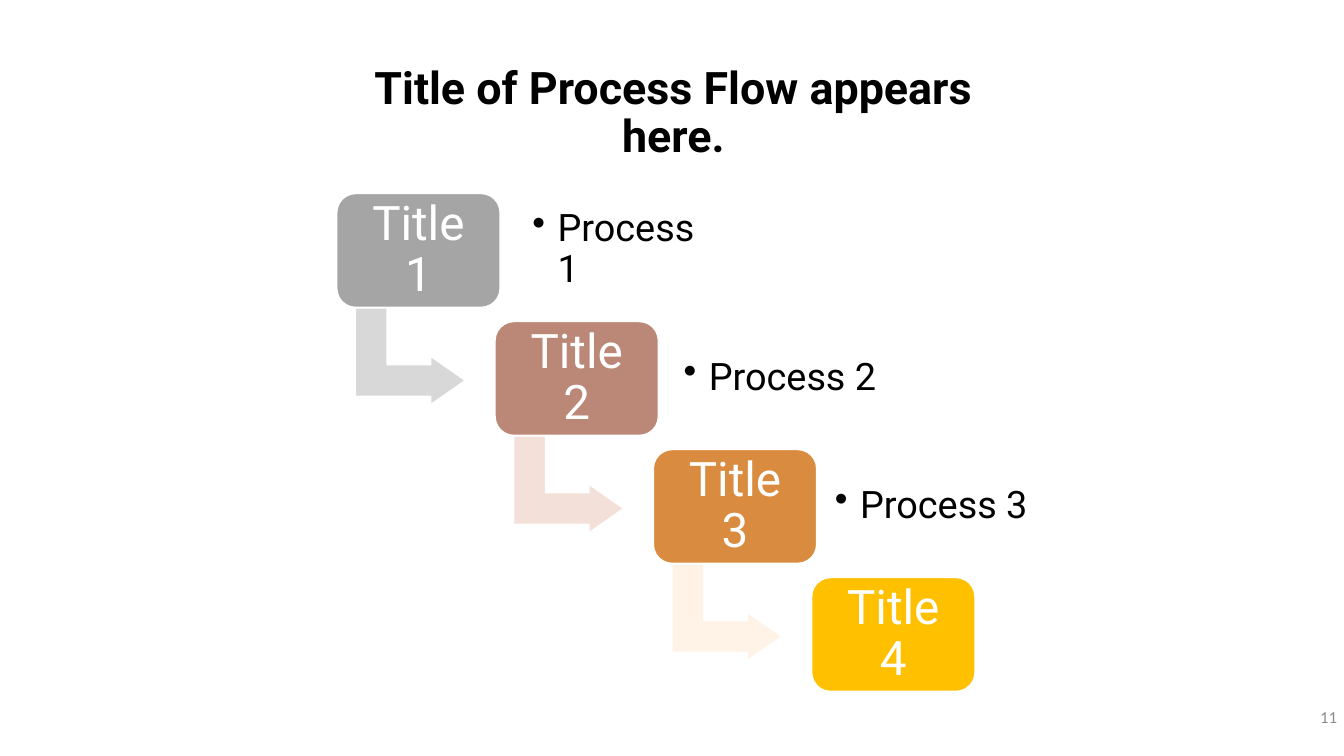
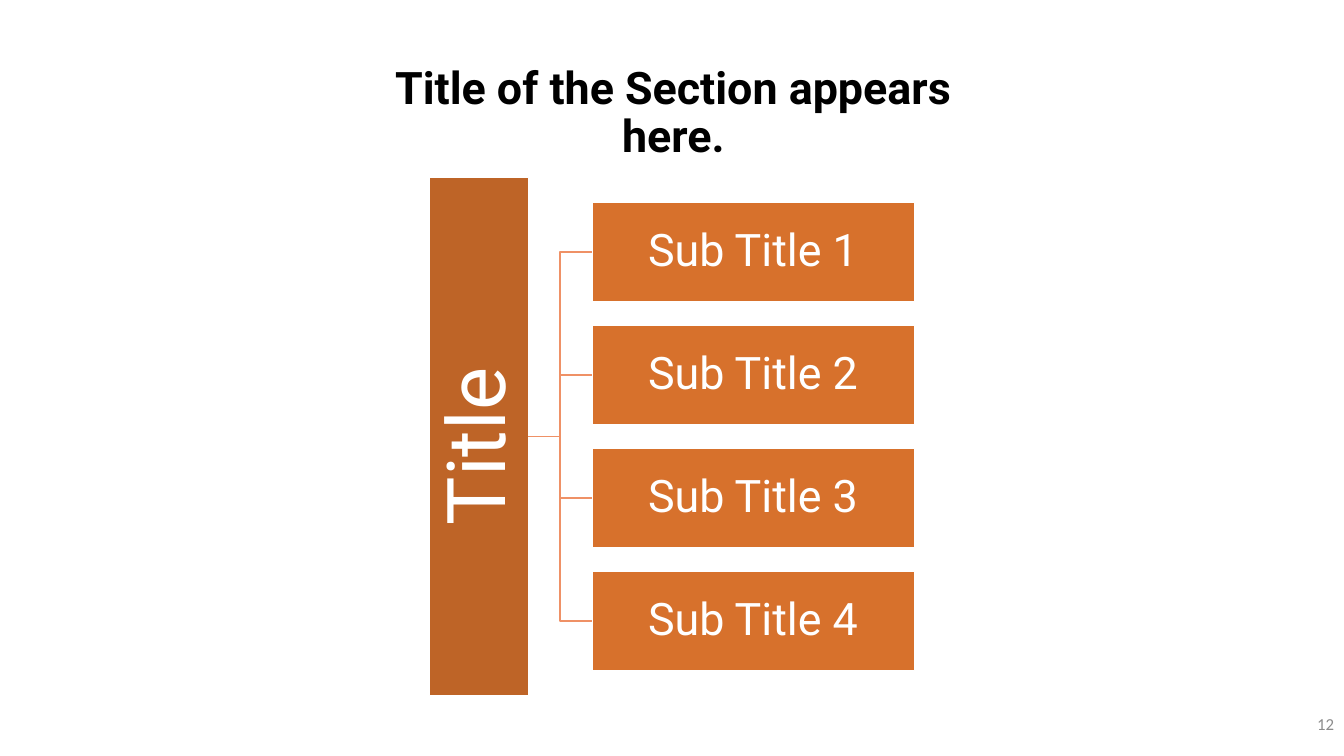
from dataclasses import dataclass

from lxml.etree import SubElement
from pptx import Presentation
from pptx.dml.color import RGBColor
from pptx.enum.shapes import MSO_CONNECTOR, MSO_SHAPE
from pptx.enum.text import MSO_ANCHOR, MSO_AUTO_SIZE, PP_ALIGN
from pptx.oxml.ns import qn
from pptx.util import Inches, Pt


@dataclass(frozen=True)
class Theme:
    heading_font: str = "Roboto"
    number_font: str = "Calibri"
    ink: str = "000000"
    paper: str = "FFFFFF"
    muted: str = "8C8C8C"
    bar: str = "BE6427"
    branch: str = "D7712C"
    link: str = "EF9166"
    title_size: int = 32
    step_size: int = 34
    note_size: int = 27
    bar_size: int = 58
    branch_size: int = 32
    number_size: int = 12
    line_spacing: float = 0.9


THEME = Theme()

PROCESS = {
    "title": "Title of Process Flow appears here.",
    "number": ("11", 10.36, 6.92),
    "steps": [
        {"label": "Title 1", "fill": "A5A5A5", "arrow": "D8D8D8", "note": "Process 1", "note_width": 2.13},
        {"label": "Title 2", "fill": "BB8776", "arrow": "F2E0D9", "note": "Process 2", "note_width": 3.14},
        {"label": "Title 3", "fill": "D98B3F", "arrow": "FFF2E7", "note": "Process 3", "note_width": 2.62},
        {"label": "Title 4", "fill": "FFC000"},
    ],
}
SECTION = {
    "title": "Title of the Section appears here.",
    "number": ("12", 10.33, 6.99),
    "root": "Title ",
    "branches": ["Sub Title 1", "Sub Title 2", "Sub Title 3", "Sub Title 4"],
}


def colour(code):
    return RGBColor.from_string(code)


def write(box, text, size, ink, font=THEME.heading_font, bold=False,
          align=PP_ALIGN.CENTER, anchor=MSO_ANCHOR.MIDDLE,
          insets=(0.1, 0.05), bullet=False):
    frame = box.text_frame
    frame.word_wrap = True
    frame.vertical_anchor = anchor
    frame.margin_left = frame.margin_right = Inches(insets[0])
    frame.margin_top = frame.margin_bottom = Inches(insets[1])
    frame.text = text
    para = frame.paragraphs[0]
    para.alignment = align
    para.line_spacing = THEME.line_spacing
    if bullet:
        properties = para._p.get_or_add_pPr()
        properties.set("marL", str(Inches(0.25)))
        properties.set("indent", str(Inches(-0.25)))
        SubElement(properties, qn("a:buChar")).set("char", "•")
    span = para.runs[0]
    span.font.name = font
    span.font.size = Pt(size)
    span.font.bold = bold
    span.font.color.rgb = colour(ink)


def add_text(page, area, text, size, ink, **style):
    box = page.shapes.add_textbox(*map(Inches, area))
    write(box, text, size, ink, **style)
    return box


def add_block(page, kind, area, fill, adjustments=()):
    block = page.shapes.add_shape(kind, *map(Inches, area))
    block.shadow.inherit = False
    block.fill.solid()
    block.fill.fore_color.rgb = colour(fill)
    block.line.color.rgb = colour(THEME.paper)
    block.line.width = Pt(1)
    for index, value in enumerate(adjustments):
        block.adjustments[index] = value
    return block


def add_page(deck, content):
    page = deck.slides.add_slide(deck.slide_layouts[6])
    number, left, top = content["number"]
    add_text(page, (left, top, 3, 0.4), number, THEME.number_size, THEME.muted,
             font=THEME.number_font, align=PP_ALIGN.RIGHT)
    title = add_text(page, (3.28, 0.6, 6.8, 1.07), content["title"],
                     THEME.title_size, THEME.ink, bold=True, anchor=MSO_ANCHOR.TOP)
    title.text_frame.auto_size = MSO_AUTO_SIZE.SHAPE_TO_FIT_TEXT
    return page


def add_process(deck):
    page = add_page(deck, PROCESS)
    for index, step in enumerate(PROCESS["steps"]):
        left, top = 3.34 + 1.57 * index, 1.92 + 1.27 * index
        if "arrow" in step:
            arrow = add_block(page, MSO_SHAPE.BENT_UP_ARROW,
                              (left + 0.25, top + 1.07, 0.96, 1.09),
                              step["arrow"], (0.328, 0.25, 0.358))
            arrow.rotation = 90
        block = add_block(page, MSO_SHAPE.ROUNDED_RECTANGLE,
                          (left, top, 1.62, 1.13), step["fill"], (0.167,))
        write(block, step["label"], THEME.step_size, THEME.paper, insets=(0.15, 0))
        if "note" in step:
            add_text(page, (5.14 + 1.5 * index, top + 0.1, step["note_width"], 0.92),
                     step["note"], THEME.note_size, THEME.ink,
                     align=PP_ALIGN.LEFT, insets=(0.14, 0), bullet=True)


def add_section(deck):
    page = add_page(deck, SECTION)
    root = add_block(page, MSO_SHAPE.RECTANGLE, (4.26, 1.76, 0.98, 5.14), THEME.bar)
    write(root, SECTION["root"], THEME.bar_size, THEME.paper, insets=(0.04, 0.04))
    root.text_frame._txBody.bodyPr.set("vert", "vert270")
    for index, label in enumerate(SECTION["branches"]):
        block = add_block(page, MSO_SHAPE.RECTANGLE,
                          (5.87, 2.01 + 1.22 * index, 3.2, 0.98), THEME.branch)
        write(block, label, THEME.branch_size, THEME.paper, insets=(0.02, 0.02))
        link = page.shapes.add_connector(MSO_CONNECTOR.ELBOW, 0, 0, 0, 0)
        link.begin_connect(root, 3)
        link.end_connect(block, 1)
        link.line.color.rgb = colour(THEME.link)
        link.line.width = Pt(1)
        SubElement(link._element.spPr, qn("a:effectLst"))


def main():
    deck = Presentation()
    deck.slide_width, deck.slide_height = Inches(13.33), Inches(7.5)
    add_process(deck)
    add_section(deck)
    deck.save("out.pptx")


if __name__ == "__main__":
    main()
